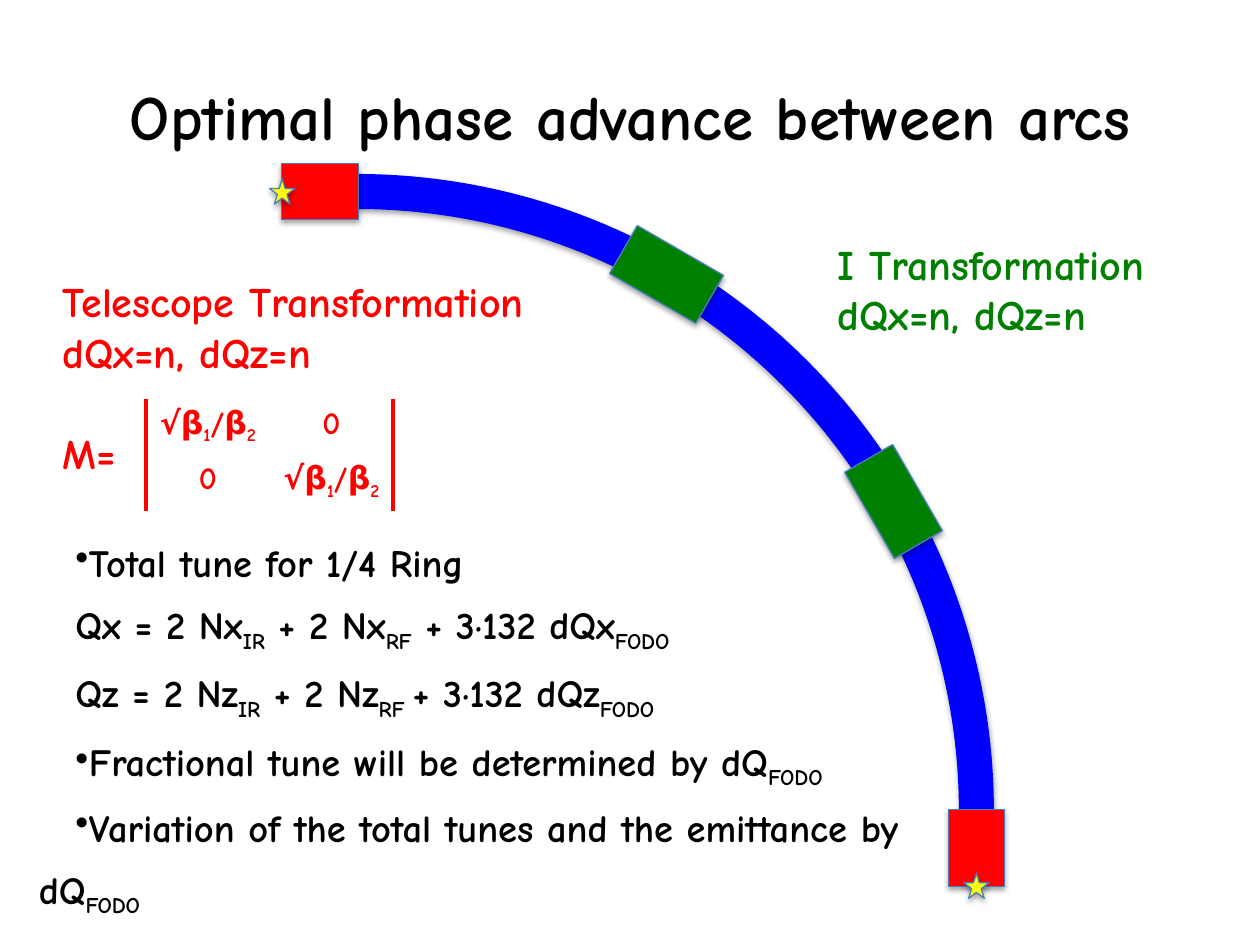
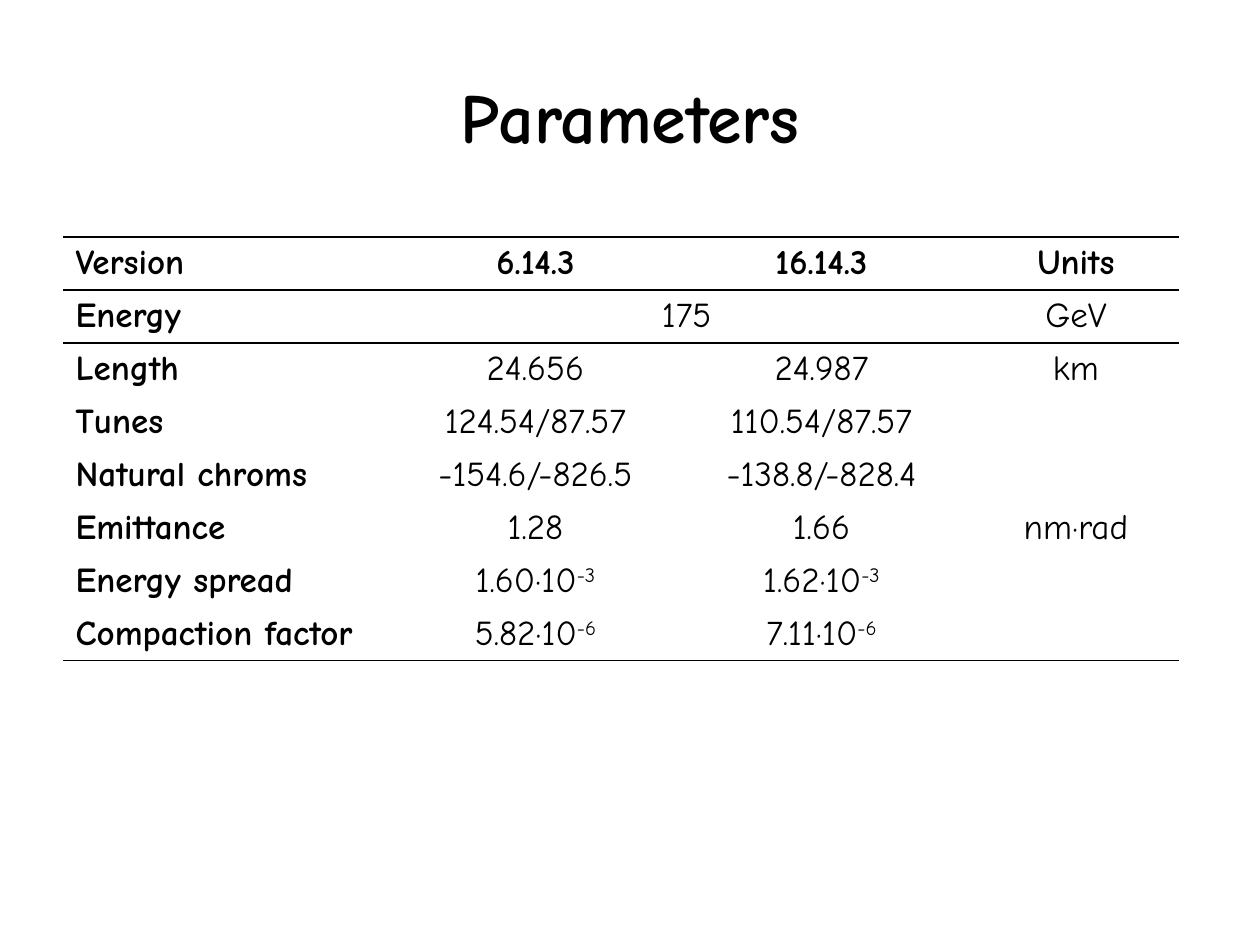
from math import cos, radians, sin

from lxml import etree
from pptx import Presentation
from pptx.dml.color import RGBColor
from pptx.enum.shapes import MSO_SHAPE
from pptx.enum.text import MSO_ANCHOR, PP_ALIGN
from pptx.oxml.ns import qn
from pptx.util import Inches, Pt

ARC, RECTANGLE, STAR = MSO_SHAPE.ARC, MSO_SHAPE.RECTANGLE, MSO_SHAPE.STAR_5_POINT
LEFT, CENTER = PP_ALIGN.LEFT, PP_ALIGN.CENTER
MIDDLE = MSO_ANCHOR.MIDDLE

FONT = "Comic Neue"
COLORS = {
    "ink": "000000",
    "ring": "0000FF",
    "rf": "008000",
    "ir": "FF0000",
    "star": "FFFF00",
    "outline": "4B7EBC",
}
SUBSCRIPT, SUPERSCRIPT = -25000, 30000
SIDES = ("L", "R", "T", "B")

# The page is a grid of 10 columns by 7.5 rows
SLIDE_WIDTH, SLIDE_HEIGHT = Inches(10), Inches(7.5)
UNIT = SLIDE_WIDTH / 10

# Quarter of the ring
RING_X, RING_Y, RING_RADIUS = 2.83, 6.44, 4.92


def grid(*cells):
    return [round(cell * UNIT) for cell in cells]


def rgb(color):
    return RGBColor.from_string(COLORS[color])


def write(para, text, size, color="ink", bold=True, shift=SUBSCRIPT):
    """Write text; every second part between bars is raised or lowered."""
    for index, part in enumerate(text.split("|")):
        if not part:
            continue
        span = para.add_run()
        span.text = part
        for name, value in {"name": FONT, "size": Pt(size), "bold": bold}.items():
            setattr(span.font, name, value)
        span.font.color.rgb = rgb(color)
        if index % 2:
            span.font._element.set("baseline", str(shift))


def add_page(deck, title, size):
    page = deck.slides.add_slide(deck.slide_layouts[5])
    box = page.shapes.title
    box.left, box.top, box.width, box.height = grid(0.5, 0.29, 9, 1.25)
    box.text_frame.vertical_anchor = MIDDLE
    para = box.text_frame.paragraphs[0]
    para.alignment = CENTER
    write(para, title, size)
    return page


def add_text(page, frame, lines, size, color="ink", wrap=True, **spacing):
    box = page.shapes.add_textbox(*grid(*frame))
    box.text_frame.word_wrap = wrap
    paras = []
    for index, line in enumerate(lines):
        para = box.text_frame.add_paragraph() if index else box.text_frame.paragraphs[0]
        for name, value in spacing.items():
            setattr(para, name, value)
        write(para, line, size, color)
        paras.append(para)
    return paras


def set_indent(para, bullet):
    properties = para._p.get_or_add_pPr()
    properties.set("marL", "0")
    properties.set("indent", str(Inches(0.29)))
    if bullet:
        etree.SubElement(properties, qn("a:buChar")).set("char", "•")


def add_shadow(shape, distance, opacity):
    shape.shadow.inherit = False
    effects = shape._element.spPr.find(qn("a:effectLst"))
    shadow = etree.SubElement(
        effects, qn("a:outerShdw"), blurRad=str(Pt(3.1)),
        dist=str(Pt(distance)), dir="5400000", rotWithShape="0")
    tint = etree.SubElement(shadow, qn("a:srgbClr"), val=COLORS["ink"])
    etree.SubElement(tint, qn("a:alpha"), val=str(opacity * 1000))


def add_ring_part(group, kind, size, angle, color, shift=0, turned=True):
    """Centre a part on the arc, moved along its tangent by shift."""
    turn = radians(angle)
    x = RING_X + RING_RADIUS * sin(turn) + shift * cos(turn)
    y = RING_Y - RING_RADIUS * cos(turn) + shift * sin(turn)
    width, height = size
    part = group.shapes.add_shape(
        kind, *grid(x - width / 2, y - height / 2, width, height))
    part.rotation = angle if turned else 0
    part.fill.solid()
    part.fill.fore_color.rgb = rgb(color)
    part.line.color.rgb = rgb("outline")
    part.line.width = Pt(0.75)
    add_shadow(part, 1.8, 35)


def add_ring(page):
    group = page.shapes.add_group_shape()
    arc = group.shapes.add_shape(ARC, *grid(
        RING_X - RING_RADIUS, RING_Y - RING_RADIUS, 2 * RING_RADIUS, 2 * RING_RADIUS))
    arc.fill.background()
    arc.line.color.rgb = rgb("ring")
    arc.line.width = Pt(20)
    add_shadow(arc, 1.6, 38)
    for angle in (60, 30):
        add_ring_part(group, RECTANGLE, (0.79, 0.44), angle, "rf")
    ends = ((0, -1), (90, 1))
    for angle, side in ends:
        add_ring_part(group, RECTANGLE, (0.61, 0.44), angle, "ir", 0.29 * side)
    for angle, side in ends:
        add_ring_part(group, STAR, (0.2, 0.2), angle, "star", 0.59 * side, False)


def set_borders(cell, drawn, color, width):
    properties = cell._tc.get_or_add_tcPr()
    for side in SIDES:
        line = etree.SubElement(properties, qn(f"a:ln{side}"))
        if side in drawn:
            line.set("w", str(Pt(width)))
            fill = etree.SubElement(line, qn("a:solidFill"))
            etree.SubElement(fill, qn("a:srgbClr"), val=COLORS[color])
        else:
            etree.SubElement(line, qn("a:noFill"))


def add_grid_table(page, corner, columns, row_height, rows, edges, style, line_width):
    """edges(row, column) names the drawn sides, style(...) the text format."""
    frame = page.shapes.add_table(
        len(rows), len(columns), *grid(*corner, sum(columns), row_height * len(rows)))
    table = frame.table
    table.first_row = table.horz_banding = False
    for column, width in zip(table.columns, columns):
        column.width = grid(width)[0]
    for r, row in enumerate(rows):
        table.rows[r].height = grid(row_height)[0]
        for c, text in enumerate(row):
            cell = table.cell(r, c)
            text_format = style(r, c)
            set_borders(cell, edges(r, c), text_format["color"], line_width)
            cell.fill.background()
            para = cell.text_frame.paragraphs[0]
            para.alignment = text_format.pop("alignment")
            write(para, text, **text_format)
    return table


def add_matrix(page):
    term = "√β|1|/β|2"
    add_grid_table(
        page, (1.16, 3.17), (0.98, 0.98), 0.44, [(term, "0"), ("0", term)],
        edges=lambda r, c: "R" if c else "L",
        style=lambda r, c: {"size": 18, "color": "ir", "alignment": CENTER},
        line_width=2.25)


def add_parameters(page):
    rows = [
        ("Version", "6.14.3", "16.14.3", "Units"),
        ("Energy", "175", "", "GeV"),
        ("Length", "24.656", "24.987", "km"),
        ("Tunes", "124.54/87.57", "110.54/87.57", ""),
        ("Natural chroms", "-154.6/-826.5", "-138.8/-828.4", ""),
        ("Emittance", "1.28", "1.66", "nm·rad"),
        ("Energy spread", "1.60·10|-3", "1.62·10|-3", ""),
        ("Compaction factor", "5.82·10|-6", "7.11·10|-6", ""),
    ]
    ruled = (0, 1, 2, len(rows))

    def edges(r, c):
        return [side for side, rule in (("T", r), ("B", r + 1)) if rule in ruled]

    def style(r, c):
        return {"size": 20, "color": "ink", "bold": r == 0 or c == 0,
                "shift": SUPERSCRIPT, "alignment": CENTER if c else LEFT}

    table = add_grid_table(page, (0.5, 1.88), (2.68, 2.14, 2.4, 1.64), 0.42,
                           rows, edges, style, line_width=1)
    table.cell(1, 1).merge(table.cell(1, 2))


def add_tunes(page):
    lines = [
        "Total tune for 1/4 Ring",
        "Qx = 2 Nx|IR| + 2 Nx|RF| + 3·132 dQx|FODO",
        "Qz = 2 Nz|IR| + 2 Nz|RF |+ 3·132 dQz|FODO",
        "Fractional tune will be determined by dQ|FODO",
        "Variation of the total tunes and the emittance by dQ|FODO",
    ]
    paras = add_text(page, (0.21, 4.12, 7.27, 2.97), lines, 22, line_spacing=1.3)
    for line, para in zip(lines, paras):
        set_indent(para, bullet=not line.startswith("Q"))


def main():
    deck = Presentation()
    deck.slide_width, deck.slide_height = SLIDE_WIDTH, SLIDE_HEIGHT

    # Phase advance between arcs
    page = add_page(deck, "Optimal phase advance between arcs", 36)
    add_ring(page)
    phase = "dQx=n, dQz=n"
    add_text(page, (6.55, 1.84, 3.02, 0.91), ["I Transformation", phase],
             24, "rf", wrap=False)
    add_tunes(page)
    telescope = add_text(page, (0.4, 2.14, 4.42, 1.72),
                         ["Telescope Transformation", phase, "M="],
                         24, "ir", wrap=False)
    telescope[-1].space_before = Pt(29)
    add_matrix(page)

    # Parameters
    page = add_page(deck, "Parameters", 40)
    add_parameters(page)

    deck.save("out.pptx")


if __name__ == "__main__":
    main()
